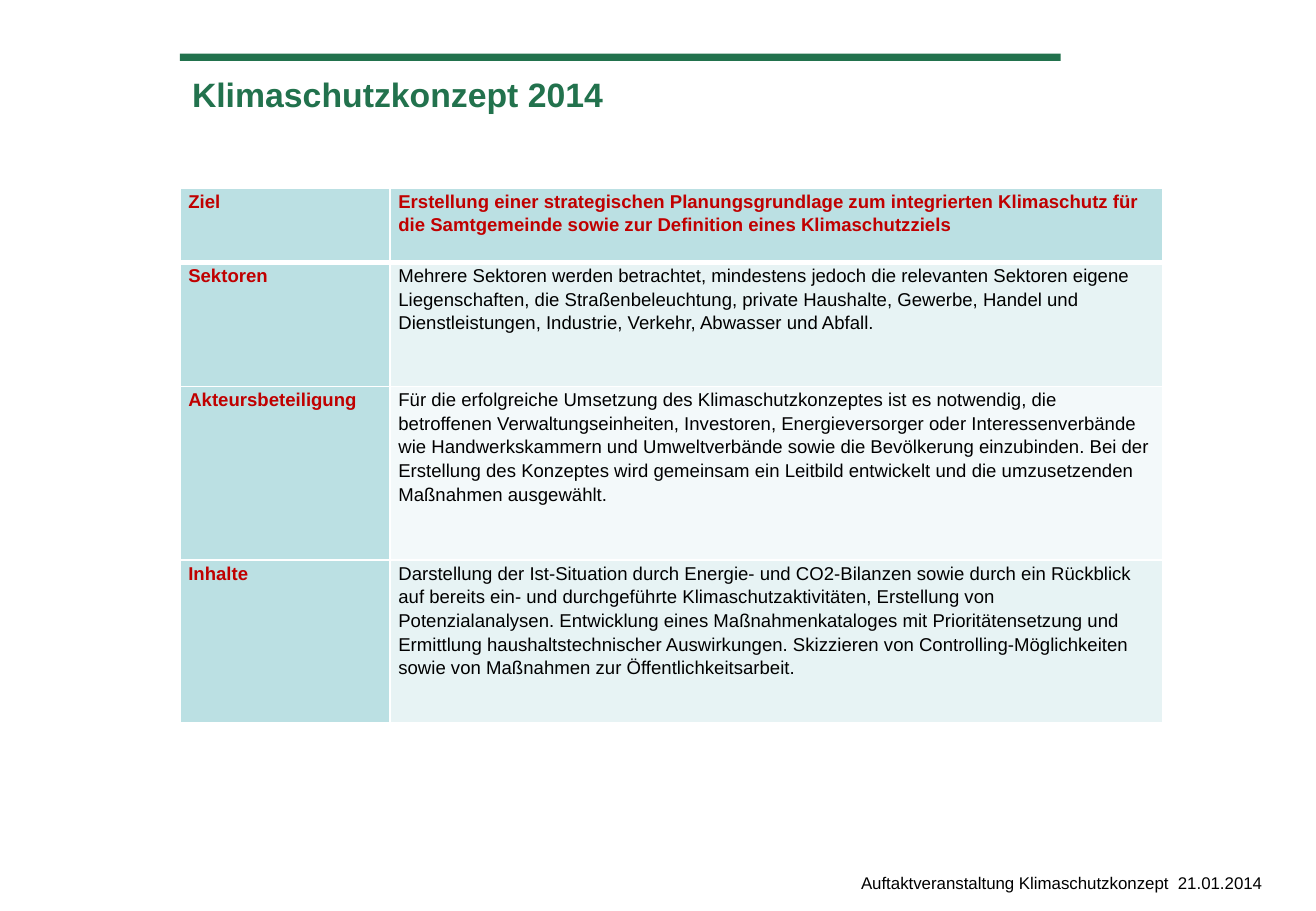
from lxml.etree import SubElement as Sub
from pptx import Presentation
from pptx.dml.color import RGBColor as RGB
from pptx.enum.shapes import MSO_SHAPE as SHAPE
from pptx.enum.text import MSO_ANCHOR as ANCHOR, PP_ALIGN as ALIGN
from pptx.oxml.ns import qn
from pptx.util import Pt

COLORS = {
    "green": "22724D", "red": "C00000", "black": "000000", "white": "FFFFFF",
    "head": "BBE0E3", "odd": "E7F3F4", "even": "F3F9FA",
}
LEFT = 106.6
COLS = (124.5, 458)
ROWS = (
    (44, "Ziel", "Erstellung einer strategischen Planungsgrundlage zum integrierten "
     "Klimaschutz für die Samtgemeinde sowie zur Definition eines Klimaschutzziels"),
    (73.5, "Sektoren", "Mehrere Sektoren werden betrachtet, mindestens jedoch die "
     "relevanten Sektoren eigene Liegenschaften, die Straßenbeleuchtung, private "
     "Haushalte, Gewerbe, Handel und Dienstleistungen, Industrie, Verkehr, Abwasser "
     "und Abfall."),
    (103, "Akteursbeteiligung", "Für die erfolgreiche Umsetzung des "
     "Klimaschutzkonzeptes ist es notwendig, die betroffenen Verwaltungseinheiten, "
     "Investoren, Energieversorger oder Interessenverbände wie Handwerkskammern und "
     "Umweltverbände sowie die Bevölkerung einzubinden. Bei der Erstellung des "
     "Konzeptes wird gemeinsam ein Leitbild entwickelt und die umzusetzenden "
     "Maßnahmen ausgewählt."),
    (96.5, "Inhalte", "Darstellung der Ist-Situation durch Energie- und CO2-Bilanzen "
     "sowie durch ein Rückblick auf bereits ein- und durchgeführte "
     "Klimaschutzaktivitäten, Erstellung von Potenzialanalysen. Entwicklung eines "
     "Maßnahmenkataloges mit Prioritätensetzung und Ermittlung haushaltstechnischer "
     "Auswirkungen. Skizzieren von Controlling-Möglichkeiten sowie von Maßnahmen zur "
     "Öffentlichkeitsarbeit."),
)


def color(name):
    return RGB.from_string(COLORS[name])


def write(frame, text, size, ink="black", bold=False, space=1.0):
    frame.word_wrap = True
    par = frame.paragraphs[0]
    par.text = text
    par.alignment = ALIGN.LEFT
    par.line_spacing = space
    font = par.font
    font.name, font.size, font.bold = "Arial", Pt(size), bold
    font.color.rgb = color(ink)


def border(cell, low):
    # Lines come before the fill in the cell properties
    props = cell._tc.get_or_add_tcPr()
    for side, width in (("L", 1), ("R", 1), ("T", 1), ("B", low)):
        line = Sub(props, qn(f"a:ln{side}"), w=str(Pt(width)))
        fill = Sub(line, qn("a:solidFill"))
        Sub(fill, qn("a:srgbClr"), val=COLORS["white"])


def header(slide, left, top, width):
    # Green bar
    bar = slide.shapes.add_shape(SHAPE.RECTANGLE, Pt(left), Pt(top), Pt(width), Pt(4.3))
    bar.shadow.inherit = False
    bar.fill.solid()
    bar.fill.fore_color.rgb = color("green")
    bar.line.fill.background()
    # Title below it
    title = slide.shapes.title
    title.left, title.top, title.width, title.height = (
        Pt(left), Pt(top + 8.6), Pt(width), Pt(31.5))
    write(title.text_frame, "Klimaschutzkonzept 2014", 20, "green", True)
    title.text_frame.vertical_anchor = ANCHOR.TOP


def grid(slide, left, top):
    high = sum(row[0] for row in ROWS)
    table = slide.shapes.add_table(
        len(ROWS), len(COLS), Pt(left), Pt(top), Pt(sum(COLS)), Pt(high)).table
    for col, width in zip(table.columns, COLS):
        col.width = Pt(width)
    for r, (height, *texts) in enumerate(ROWS):
        table.rows[r].height = Pt(height)
        for c, text in enumerate(texts):
            cell = table.cell(r, c)
            key = r == 0 or c == 0
            cell.margin_left = cell.margin_right = Pt(5)
            cell.margin_top = cell.margin_bottom = 0
            write(cell.text_frame, text, 11, "red" if key else "black", key, 1.15)
            border(cell, 3 if r == 0 else 1)
            cell.fill.solid()
            cell.fill.fore_color.rgb = color(
                "head" if key else "odd" if r % 2 else "even")


def footer(slide, left, top, width, height):
    box = slide.shapes.add_textbox(Pt(left), Pt(top), Pt(width), Pt(height))
    write(box.text_frame, "Auftaktveranstaltung Klimaschutzkonzept  21.01.2014", 10)


def main():
    deck = Presentation()
    deck.slide_width, deck.slide_height = Pt(780), Pt(540)
    slide = deck.slides.add_slide(deck.slide_layouts[5])
    header(slide, LEFT, 31.8, 522)
    grid(slide, LEFT, 111.6)
    footer(slide, 503.3, 514, 276.5, 22)
    deck.save("out.pptx")


if __name__ == "__main__":
    main()
